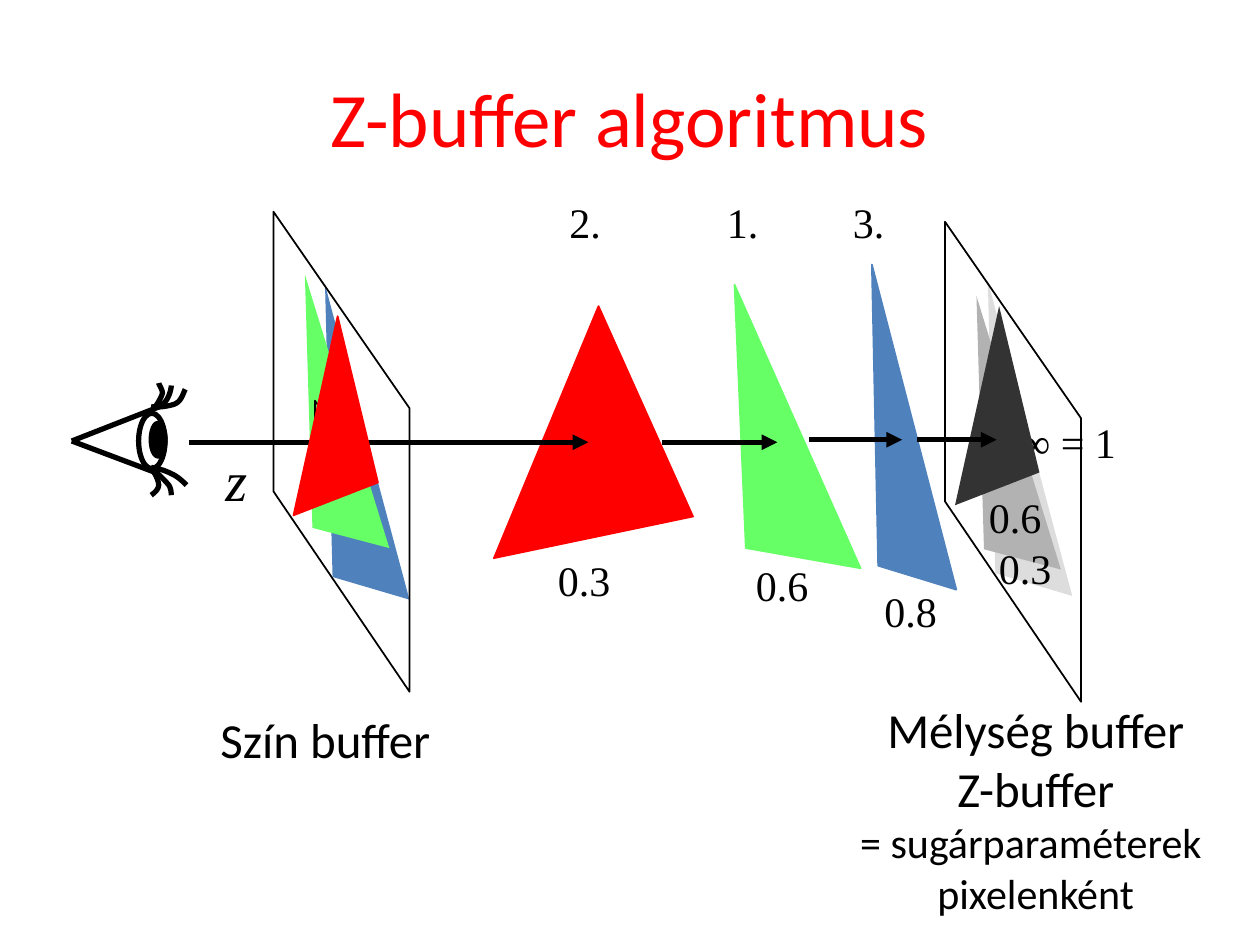
from dataclasses import dataclass

from lxml.etree import SubElement
from pptx import Presentation
from pptx.dml.color import RGBColor
from pptx.enum.shapes import MSO_CONNECTOR as Connector, MSO_SHAPE as Preset
from pptx.enum.text import MSO_ANCHOR as Anchor, MSO_AUTO_SIZE as AutoSize, PP_ALIGN as Align
from pptx.oxml.ns import qn
from pptx.util import Inches, Pt


@dataclass(frozen=True)
class Theme:
    """Colours, fonts, type sizes and line widths of the slide."""
    ink: str = "000000"
    paper: str = "FFFFFF"
    red: str = "FF0000"
    green: str = "66FF66"
    blue: str = "4F81BD"
    near: str = "333333"
    middle: str = "B2B2B2"
    far: str = "DDDDDD"
    sans: str = "Calibri"
    serif: str = "Times New Roman"
    title: int = 44
    axis: int = 32
    caption: int = 28
    label: int = 24
    thin: int = 1
    thick: int = 3


class Diagram:
    """Draws styled elements on the current slide or group."""

    def __init__(self, slide, theme):
        """Keep the slide and the theme."""
        self.slide = slide
        self.theme = theme
        self.shapes = slide.shapes

    def start_group(self):
        """Send the following elements into a new group."""
        self.shapes = self.slide.shapes.add_group_shape().shapes

    def style_font(self, paragraph, size, name, color=None):
        """Set the font of a whole paragraph."""
        font = paragraph.font
        font.size, font.name = Pt(size), name
        font.color.rgb = RGBColor.from_string(color or self.theme.ink)

    def paint(self, shape, fill, line, width):
        """Set fill and outline, either of which may be absent."""
        shape.shadow.inherit = False
        if fill:
            shape.fill.solid()
            shape.fill.fore_color.rgb = RGBColor.from_string(fill)
        else:
            shape.fill.background()
        if line:
            shape.line.color.rgb = RGBColor.from_string(line)
            shape.line.width = Pt(width)
        else:
            shape.line.fill.background()

    def title(self, text):
        """Fill the title placeholder."""
        shape = self.slide.shapes.title
        shape.left, shape.top = Inches(0.5), Inches(0.3)
        shape.width, shape.height = Inches(9), Inches(1.25)
        shape.text_frame.vertical_anchor = Anchor.MIDDLE
        paragraph = shape.text_frame.paragraphs[0]
        paragraph.text, paragraph.alignment = text, Align.CENTER
        self.style_font(paragraph, self.theme.title, self.theme.sans, self.theme.red)

    def text(self, left, top, width, height, lines, name, align=Align.LEFT):
        """Add an unwrapped text box from (text, size) lines."""
        box = self.shapes.add_textbox(Inches(left), Inches(top), Inches(width), Inches(height))
        frame = box.text_frame
        frame.word_wrap, frame.auto_size = False, AutoSize.SHAPE_TO_FIT_TEXT
        for index, (content, size) in enumerate(lines):
            paragraph = frame.add_paragraph() if index else frame.paragraphs[0]
            paragraph.text, paragraph.alignment = content, align
            self.style_font(paragraph, size, name)
        return frame

    def label(self, left, top, content, width=0.62):
        """Add a one-line serif label."""
        self.text(left, top, width, 0.5, [(content, self.theme.label)], self.theme.serif)

    def outline(self, points, fill=None, line=None, width=1, close=True):
        """Draw straight segments through the points."""
        corners = [(Inches(x), Inches(y)) for x, y in points]
        builder = self.shapes.build_freeform(*corners[0], scale=1.0)
        builder.add_line_segments(corners[1:], close=close)
        self.paint(builder.convert_to_shape(), fill, line, width)

    def polygon(self, left, top, offsets, fill=None, line=None):
        """Draw a closed outline from offsets to a corner."""
        points = [(left + x, top + y) for x, y in offsets]
        self.outline(points, fill, line, self.theme.thin)

    def curve(self, *controls, steps=10):
        """Draw an open chain of cubic curves."""
        points = [controls[0]]
        for first in range(0, len(controls) - 1, 3):
            a, b, c, d = controls[first:first + 4]
            for step in range(1, steps + 1):
                t = step / steps
                u = 1 - t
                points.append(tuple(
                    u**3 * p + 3 * u * u * t * q + 3 * u * t * t * r + t**3 * s
                    for p, q, r, s in zip(a, b, c, d)))
        self.outline(points, None, self.theme.ink, self.theme.thick, close=False)

    def line(self, x1, y1, x2, y2, arrow=False):
        """Draw a thick straight line, optionally with an arrowhead."""
        connector = self.shapes.add_connector(
            Connector.STRAIGHT, Inches(x1), Inches(y1), Inches(x2), Inches(y2))
        connector.line.color.rgb = RGBColor.from_string(self.theme.ink)
        connector.line.width = Pt(self.theme.thick)
        if arrow:
            SubElement(connector.line._get_or_add_ln(), qn("a:tailEnd"), type="triangle")
        SubElement(connector._element.spPr, qn("a:effectLst"))

    def ellipse(self, left, top, width, height, fill):
        """Draw a thickly outlined ellipse."""
        shape = self.shapes.add_shape(
            Preset.OVAL, Inches(left), Inches(top), Inches(width), Inches(height))
        self.paint(shape, fill, self.theme.ink, self.theme.thick)


FRAME = [(0, 0), (0, 2.22), (1.08, 3.81), (1.08, 1.56)]
PIXEL = [(0, 0), (0, 0.33), (0.17, 0.58), (0.17, 0.25)]
FAR_TRIANGLE = [(0, 0), (0.67, 2.5), (0.06, 2.32)]
MIDDLE_TRIANGLE = [(0, 0), (0.67, 2.17), (0.06, 2.01)]
NEAR_TRIANGLE = [(0, 1.58), (0.35, 0), (0.67, 1.32)]
LASHES = [
    [(1.2, 3.23), (1.24, 3.23), (1.28, 3.22), (1.31, 3.19), (1.34, 3.16), (1.36, 3.09), (1.36, 3.06)],
    [(1.26, 3.23), (1.28, 3.23), (1.37, 3.22), (1.4, 3.2), (1.44, 3.18), (1.46, 3.11), (1.47, 3.09)],
    [(1.2, 3.71), (1.27, 3.72), (1.32, 3.74), (1.36, 3.76), (1.41, 3.78), (1.46, 3.83), (1.48, 3.85)],
    [(1.2, 3.71), (1.23, 3.74), (1.31, 3.81), (1.34, 3.85), (1.36, 3.88), (1.36, 3.92), (1.36, 3.93)],
    [(1.2, 3.71), (1.23, 3.76), (1.26, 3.81), (1.26, 3.85), (1.26, 3.88), (1.23, 3.91), (1.2, 3.93)],
    [(1.23, 3.23), (1.24, 3.22), (1.28, 3.16), (1.29, 3.12), (1.29, 3.09), (1.26, 3.05), (1.26, 3.04)],
]


def draw_scene(diagram, theme):
    """Draw both buffers, the triangles and the ray between them."""
    diagram.polygon(7.84, 2.23, FAR_TRIANGLE, theme.far)
    diagram.polygon(2.58, 2.26, FAR_TRIANGLE, theme.blue)
    diagram.polygon(7.75, 2.35, MIDDLE_TRIANGLE, theme.middle)
    diagram.polygon(2.42, 2.18, MIDDLE_TRIANGLE, theme.green)
    diagram.polygon(2.17, 1.68, FRAME, line=theme.ink)
    diagram.polygon(3.92, 2.43, [(0, 2), (0.83, 0), (1.58, 1.67)], theme.red, theme.red)
    diagram.polygon(2.5, 3.18, PIXEL, line=theme.ink)
    diagram.line(1.5, 3.51, 4.67, 3.51, arrow=True)
    diagram.polygon(5.83, 2.26, [(0, 0), (1, 2.25), (0.09, 2.09)], theme.green, theme.green)
    diagram.line(5.25, 3.51, 6.17, 3.51, arrow=True)
    diagram.polygon(7.5, 1.76, FRAME, line=theme.ink)
    diagram.polygon(7.83, 3.26, PIXEL, line=theme.ink)
    diagram.label(8, 3.26, "∞ = 1", 0.96)
    for left, top, depth in [(5.9, 4.39, "0.6"), (4.33, 4.35, "0.3"),
                             (7.75, 3.85, "0.6"), (7.83, 4.26, "0.3")]:
        diagram.label(left, top, depth)
    diagram.polygon(2.33, 2.51, NEAR_TRIANGLE, theme.red, theme.red)
    diagram.polygon(7.58, 2.43, NEAR_TRIANGLE, theme.near)
    diagram.polygon(6.92, 2.1, [(0, 0), (0.67, 2.58), (0.05, 2.39)], theme.blue, theme.blue)
    diagram.label(6.92, 4.6, "0.8")
    for left, order in [(5.67, "1."), (4.42, "2."), (6.67, "3.")]:
        diagram.label(left, 1.51, order, 0.45)
    diagram.line(6.42, 3.49, 7.16, 3.49, arrow=True)
    axis = diagram.text(1.69, 3.49, 0.38, 0.63, [("z", theme.axis)], theme.serif)
    axis.paragraphs[0].font.italic = True
    diagram.line(7.28, 3.49, 7.91, 3.49, arrow=True)


def draw_eye(diagram, theme):
    """Draw the eye as one group."""
    diagram.start_group()
    for lid in (3.23, 3.76):
        diagram.line(0.57, 3.5, 1.26, lid)
    diagram.ellipse(1.1, 3.28, 0.21, 0.44, theme.paper)
    diagram.ellipse(1.2, 3.36, 0.11, 0.26, theme.ink)
    for lash in LASHES:
        diagram.curve(*lash)


def main():
    """Build and save the slide."""
    presentation = Presentation()
    presentation.slide_width, presentation.slide_height = Inches(10), Inches(7.5)
    theme = Theme()
    diagram = Diagram(presentation.slides.add_slide(presentation.slide_layouts[5]), theme)
    diagram.title("Z-buffer algoritmus")
    draw_scene(diagram, theme)
    diagram.text(1.65, 5.58, 1.89, 0.57, [("Szín buffer", theme.caption)], theme.sans)
    diagram.text(6.71, 5.5, 3.02, 1.85, [
        ("Mélység buffer", theme.caption), ("Z-buffer", theme.caption),
        ("= sugárparaméterek ", theme.label), ("pixelenként", theme.label),
    ], theme.sans, Align.CENTER)
    draw_eye(diagram, theme)
    presentation.save("out.pptx")


if __name__ == "__main__":
    main()
